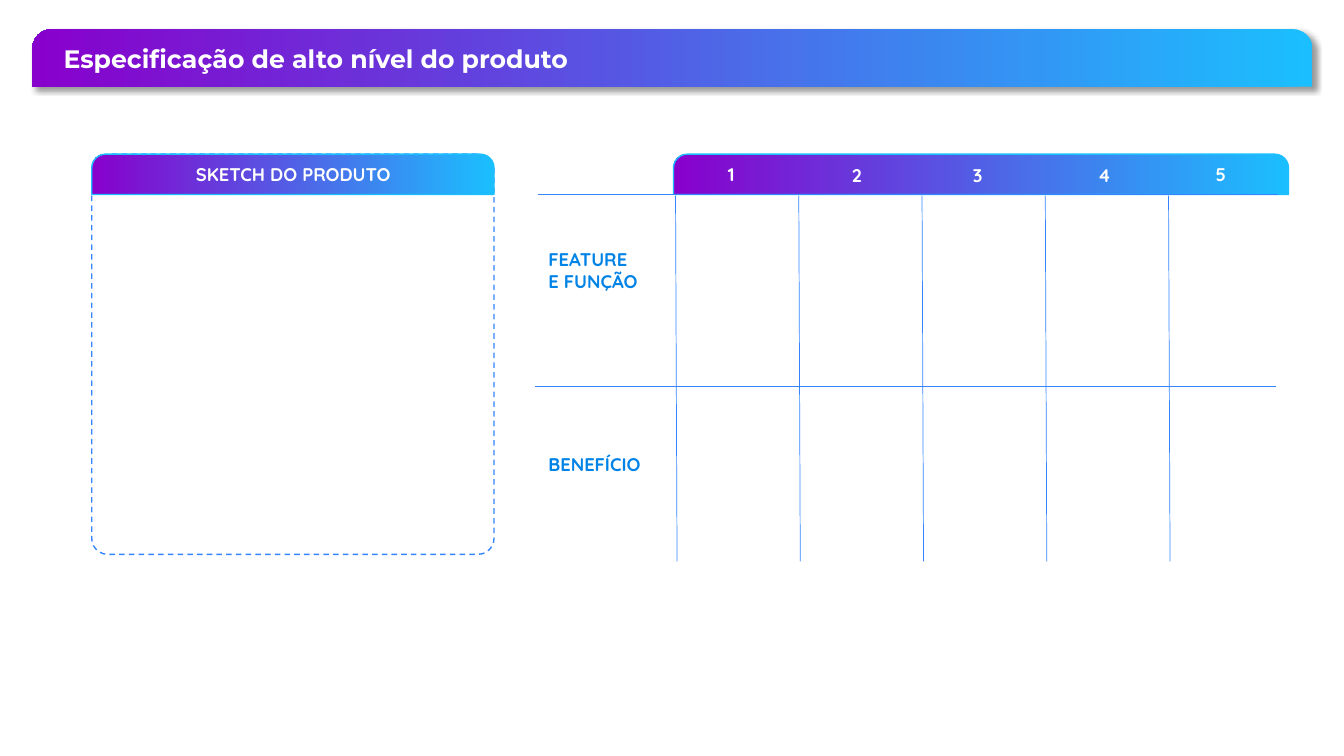
from lxml.etree import SubElement
from pptx import Presentation
from pptx.dml.color import RGBColor
from pptx.enum.dml import MSO_LINE_DASH_STYLE as DASH
from pptx.enum.shapes import MSO_CONNECTOR as CONN, MSO_SHAPE as SHAPE
from pptx.enum.text import MSO_ANCHOR as ANCHOR, MSO_AUTO_SIZE as FIT, PP_ALIGN as ALIGN
from pptx.oxml.ns import qn
from pptx.util import Pt

PX = 9144
CYAN, PURPLE, BLUE, LABEL, WHITE = "1BBFFF", "8800CC", "3485FF", "0083E6", "FFFFFF"
HEADER_H = 40


def rgb(value):
    """Turn a hex string into a colour."""
    return RGBColor.from_string(value)


def px(*values):
    """Turn px lengths into EMU."""
    return [round(v * PX) for v in values]


def add_bar(s, x, y, w, h, outline=True):
    """Add a gradient bar with rounded top corners."""
    sp = s.shapes.add_shape(SHAPE.ROUND_2_SAME_RECTANGLE, *px(x, y, w, h))
    sp.shadow.inherit = False
    sp.adjustments[0], sp.adjustments[1] = 0.34, 0
    sp.fill.gradient()
    sp.fill.gradient_angle = 180
    for stop, color in zip(sp.fill.gradient_stops, (CYAN, PURPLE)):
        stop.color.rgb = rgb(color)
    if outline:
        sp.line.color.rgb = rgb(CYAN)
        sp.line.width = Pt(1)
    else:
        sp.line.fill.background()
    return sp


def add_shadow(sp):
    """Give a shape a soft shadow to its lower right."""
    effects = sp._element.spPr.find(qn("a:effectLst"))
    shadow = SubElement(effects, qn("a:outerShdw"), blurRad="50800", dist="38100",
                        dir="2700000", algn="tl", rotWithShape="0")
    color = SubElement(shadow, qn("a:srgbClr"), val="000000")
    SubElement(color, qn("a:alpha"), val="40000")


def add_rule(shapes, x1, y1, x2, y2):
    """Add a thin blue line."""
    line = shapes.add_connector(CONN.STRAIGHT, *px(x1, y1, x2, y2))
    line.line.color.rgb = rgb(BLUE)
    line.line.width = Pt(0.5)
    SubElement(line._element.spPr, qn("a:effectLst"))


def set_font(p, name, size, color):
    """Set the bold font of a paragraph."""
    p.font.name, p.font.size, p.font.bold = name, Pt(size), True
    p.font.color.rgb = rgb(color)


def add_label(s, text, x, y, w, h, color=WHITE, align=ALIGN.LEFT):
    """Add a text box with one paragraph per line of text."""
    tf = s.shapes.add_textbox(*px(x, y, w, h)).text_frame
    tf.word_wrap = True
    tf.auto_size = FIT.SHAPE_TO_FIT_TEXT
    tf.text = text
    for p in tf.paragraphs:
        p.alignment = align
        set_font(p, "Quicksand", 13.1, color)


def add_title(s, text, x, y, w, h):
    """Add the title bar and lay the title over it."""
    add_shadow(add_bar(s, x, y, w, h, outline=False))
    title = s.shapes.title
    title.left, title.top, title.width, title.height = px(x + 21, y + 9, 565, 40)
    s.shapes._spTree.append(title._element)
    tf = title.text_frame
    tf.text = text
    tf.word_wrap = True
    tf.auto_size = FIT.SHAPE_TO_FIT_TEXT
    tf.vertical_anchor = ANCHOR.TOP
    p = tf.paragraphs[0]
    p.alignment = ALIGN.JUSTIFY
    set_font(p, "Montserrat", 18, WHITE)


def add_sketch(s, x, y, w, h):
    """Add the dashed sketch frame with its header."""
    frame = s.shapes.add_shape(SHAPE.ROUNDED_RECTANGLE, *px(x, y, w, h))
    frame.shadow.inherit = False
    frame.adjustments[0] = 0.04
    frame.fill.background()
    frame.line.color.rgb = rgb(BLUE)
    frame.line.width = Pt(1)
    frame.line.dash_style = DASH.DASH
    add_bar(s, x, y, w, HEADER_H)
    add_label(s, "SKETCH DO PRODUTO", x + 80, y + 4, 240, 32, align=ALIGN.CENTER)


def add_grid(s, x, y, w, h):
    """Add the feature and benefit grid with five numbered columns."""
    head_x, pitch = x + 137, 122.25
    add_bar(s, head_x, y, w - 137, HEADER_H)
    add_rule(s.shapes, x, y + 230, x + 735, y + 230)
    columns = s.shapes.add_group_shape()
    for i, number_x in enumerate((44, 167, 287, 411, 528)):
        column_x = head_x + 2 + i * pitch
        add_rule(columns.shapes, column_x, y + HEADER_H + 1, column_x + 1.5, y + h)
        add_label(s, str(i + 1), head_x + number_x, y + (4 if i in (0, 4) else 5), 40, 32)
    add_rule(s.shapes, x + 3, y + HEADER_H, x + 737, y + HEADER_H)
    add_label(s, "FEATURE\nE FUNÇÃO", x + 3, y + 88, 159, 54, LABEL)
    add_label(s, "BENEFÍCIO", x + 3, y + 292, 159, 32, LABEL)


def main():
    """Build and save the slide."""
    prs = Presentation()
    prs.slide_width, prs.slide_height = px(1333, 750)
    s = prs.slides.add_slide(prs.slide_layouts[5])
    add_title(s, "Especificação de alto nível do produto", 32, 29, 1270, 57)
    add_sketch(s, 91, 153, 399, 397)
    add_grid(s, 531, 153, 747, 404)
    prs.save("out.pptx")


if __name__ == "__main__":
    main()
